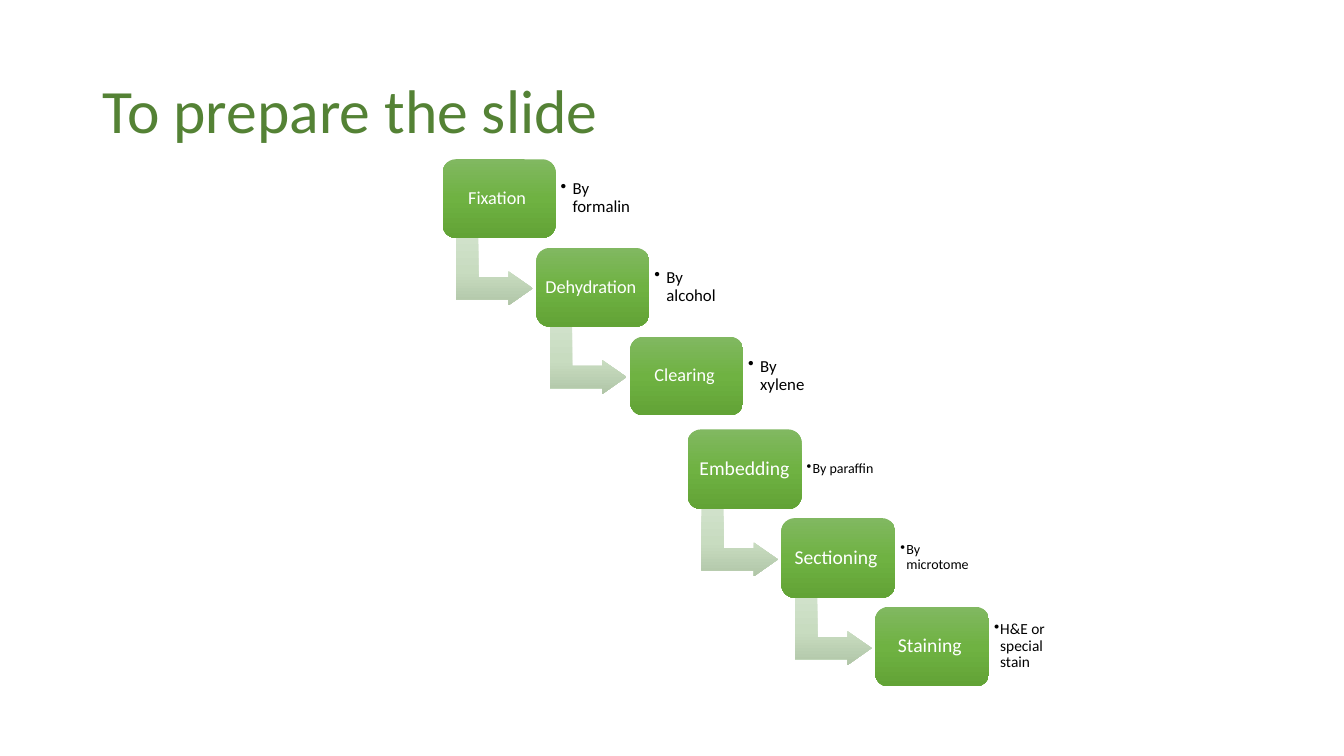
from lxml import etree
from pptx import Presentation
from pptx.dml.color import RGBColor
from pptx.enum.shapes import MSO_SHAPE
from pptx.enum.text import MSO_ANCHOR, PP_ALIGN
from pptx.oxml.ns import qn
from pptx.util import Inches, Pt

WIDTH, HEIGHT = 13.33, 7.5
FONT = "Calibri"
TITLE_GREEN = RGBColor(0x54, 0x82, 0x35)
WHITE = RGBColor(0xFF, 0xFF, 0xFF)
BLACK = RGBColor(0, 0, 0)
CARD_GREENS = (RGBColor(0x81, 0xB8, 0x61), RGBColor(0x6F, 0xB2, 0x42), RGBColor(0x62, 0xA3, 0x36))
ARROW_GREENS = (RGBColor(0xD0, 0xE1, 0xCA), RGBColor(0xC8, 0xDC, 0xC0), RGBColor(0xB1, 0xC6, 0xA8))

STEP_X, STEP_Y = 0.93, 0.88
TISSUE_STEPS = [
    ("Fixation ", "By formalin", 12),
    ("Dehydration ", "By alcohol", 12),
    ("Clearing ", "By xylene", 12),
]
SLIDE_STEPS = [
    ("Embedding ", "By paraffin", 10),
    ("Sectioning ", "By microtome", 10),
    ("Staining ", "H&E or special stain", 11),
]


def write(sp, text, size, color, align=PP_ALIGN.LEFT, inset=0.05, indent=0):
    """Write one paragraph into a shape, bulleted when an indent is given."""
    tf = sp.text_frame
    tf.word_wrap = True
    tf.vertical_anchor = MSO_ANCHOR.MIDDLE
    tf.margin_left = tf.margin_right = tf.margin_top = tf.margin_bottom = Inches(inset)
    p = tf.paragraphs[0]
    p.alignment = align
    p.line_spacing = 0.9
    if indent:
        pPr = p._p.get_or_add_pPr()
        pPr.set("marL", str(Inches(indent)))
        pPr.set("indent", str(-Inches(indent)))
        etree.SubElement(pPr, qn("a:buChar")).set("char", "•")
    r = p.add_run()
    r.text = text
    r.font.name, r.font.size = FONT, Pt(size)
    r.font.color.rgb = color


def add_text_box(s, box, *args, **options):
    """Add a text box holding one paragraph."""
    write(s.shapes.add_textbox(*map(Inches, box)), *args, **options)


def add_gradient_shape(s, kind, box, colors, adjustments):
    """Add an unlined preset shape shaded from top to bottom of the page."""
    sp = s.shapes.add_shape(kind, *map(Inches, box))
    sp.shadow.inherit = False
    sp.line.fill.background()
    for i, value in enumerate(adjustments):
        sp.adjustments[i] = value
    sp.fill.gradient()
    grad = sp._element.spPr.find(qn("a:gradFill"))
    grad.set("rotWithShape", "0")
    for child in list(grad):
        grad.remove(child)
    stops = etree.SubElement(grad, qn("a:gsLst"))
    for i, color in enumerate(colors):
        stop = etree.SubElement(stops, qn("a:gs"), pos=str(i * 50000))
        etree.SubElement(stop, qn("a:srgbClr"), val=str(color))
    etree.SubElement(grad, qn("a:lin"), ang="5400000", scaled="0")
    return sp


def draw_title(s, box):
    """Place the slide title."""
    add_text_box(s, box, "To prepare the slide", 44, TITLE_GREEN, inset=0.1)


def draw_step(s, box, step, label_size, inset, indent, has_next):
    """Place one card, its note on the right and the arrow to the next card."""
    x, y, w, h = box
    label, note, note_size = step
    if has_next:
        arrow_box = (x + 0.16 * w, y + 0.94 * h, 0.67, 0.76)
        arrow = add_gradient_shape(s, MSO_SHAPE.BENT_UP_ARROW, arrow_box,
                                   ARROW_GREENS, (0.328, 0.25, 0.358))
        arrow.rotation = 90
    card = add_gradient_shape(s, MSO_SHAPE.ROUNDED_RECTANGLE, box, CARD_GREENS, (0.167,))
    write(card, label, label_size, WHITE, PP_ALIGN.CENTER, inset)
    add_text_box(s, (x + w, y + 0.09 * h, 0.72 * w, 0.81 * h),
                 note, note_size, BLACK, indent=indent)


def draw_staircase(s, box, steps, label_size, inset, indent):
    """Place steps diagonally, starting from the box of the first card."""
    x, y, w, h = box
    for i, step in enumerate(steps):
        draw_step(s, (x + i * STEP_X, y + i * STEP_Y, w, h), step,
                  label_size, inset, indent, i < len(steps) - 1)


def main():
    """Build and save the slide."""
    prs = Presentation()
    prs.slide_width, prs.slide_height = Inches(WIDTH), Inches(HEIGHT)
    s = prs.slides.add_slide(prs.slide_layouts[6])
    draw_title(s, (0.92, 0.4, 11.5, 1.45))
    draw_staircase(s, (4.39, 1.58, 1.12, 0.78), TISSUE_STEPS, 13, 0.05, 0.12)
    draw_staircase(s, (6.82, 4.26, 1.13, 0.79), SLIDE_STEPS, 14, 0.06, 0.06)
    prs.save("out.pptx")


if __name__ == "__main__":
    main()
